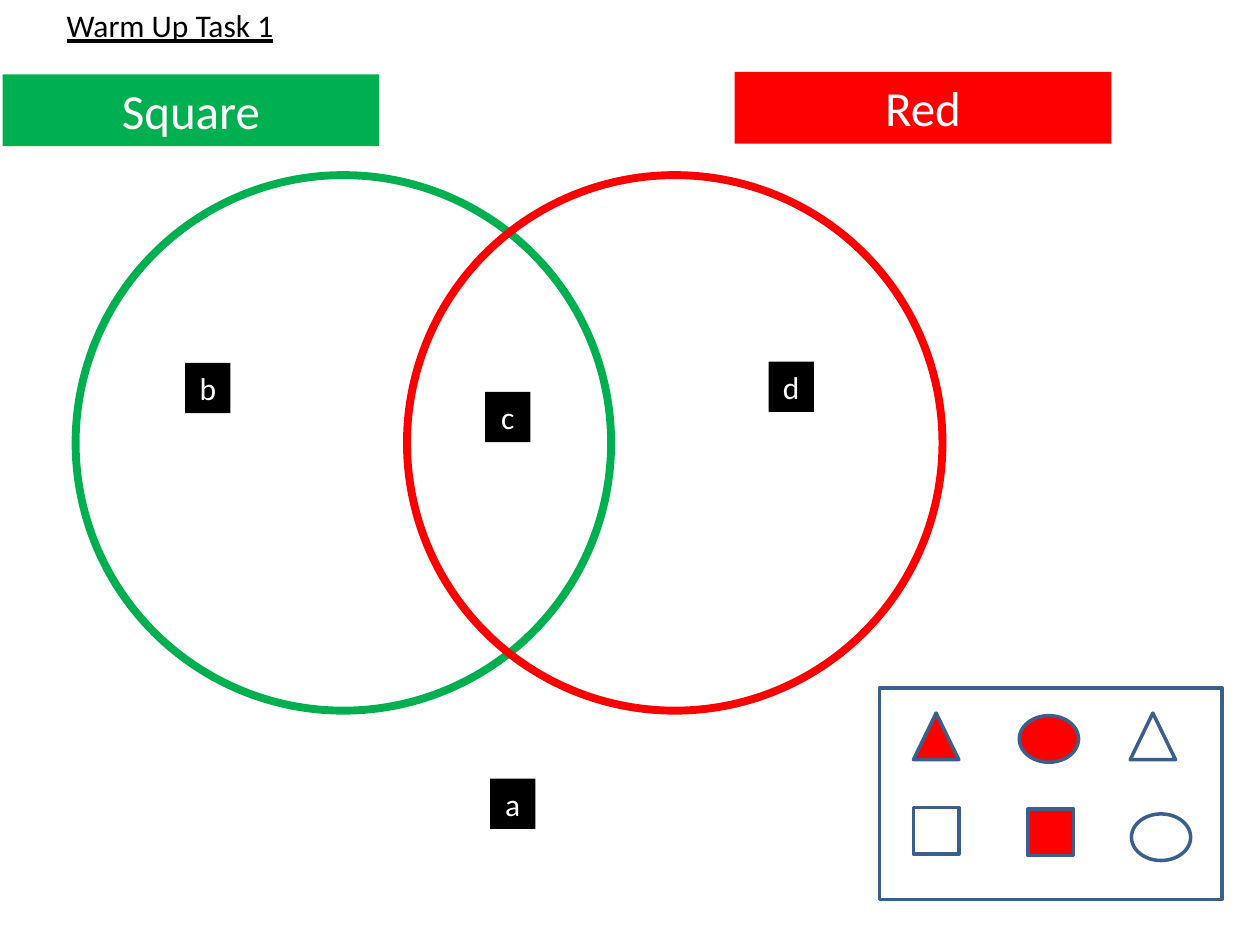
from pptx import Presentation
from pptx.dml.color import RGBColor
from pptx.enum.shapes import MSO_SHAPE as Kind
from pptx.enum.text import MSO_ANCHOR as Anchor, MSO_AUTO_SIZE as Auto, PP_ALIGN as Align
from pptx.util import Inches, Pt

RED, GREEN, WHITE, BLACK, EDGE = "FF0000", "00B050", "FFFFFF", "000000", "3A5F8C"


def color(code):
    return RGBColor.from_string(code)


def draw(shapes, kind, box, fill=None, line=None, width=2):
    shape = shapes.add_shape(kind, *map(Inches, box))
    shape.shadow.inherit = False
    if fill:
        shape.fill.solid()
        shape.fill.fore_color.rgb = color(fill)
    else:
        shape.fill.background()
    if line:
        shape.line.color.rgb = color(line)
        shape.line.width = Pt(width)
    else:
        shape.line.fill.background()
    return shape


def write(shape, text, size=18, ink=WHITE, align=Align.CENTER, under=None):
    frame = shape.text_frame
    frame.word_wrap = True
    frame.auto_size = Auto.SHAPE_TO_FIT_TEXT
    frame.vertical_anchor = Anchor.TOP
    para = frame.paragraphs[0]
    para.alignment = align
    run = para.add_run()
    run.text = text
    font = run.font
    font.name, font.size, font.underline = "Calibri", Pt(size), under
    font.color.rgb = color(ink)


def add_title(shapes, box):
    write(shapes.add_textbox(*map(Inches, box)), "Warm Up Task 1",
          ink=BLACK, align=Align.LEFT, under=True)


def add_head(shapes, box, text, fill):
    write(draw(shapes, Kind.RECTANGLE, box, fill), text, size=28)


def add_venn(shapes, box):
    left, top, wide, high = box
    # Two overlapping rings, as tall as the box
    for x, hue in ((left, GREEN), (left + wide - high, RED)):
        draw(shapes, Kind.OVAL, (x, top, high, high), line=hue, width=4.5)
    # Region labels, offset from the box corner
    for text, x, y in (("b", 0.87, 1.49), ("d", 5.5, 1.48),
                       ("a", 3.29, 4.79), ("c", 3.25, 1.72)):
        tag = draw(shapes, Kind.RECTANGLE, (left + x, top + y, 0.36, 0.4), BLACK)
        write(tag, text)


def add_key(shapes, box):
    left, top = box[:2]
    group = shapes.add_group_shape().shapes
    draw(group, Kind.RECTANGLE, box, WHITE, EDGE)
    # Shapes to sort, offset from the box corner
    for kind, x, y, fill in (
        (Kind.ISOSCELES_TRIANGLE, 0.27, 0.2, RED),
        (Kind.OVAL, 1.11, 0.22, RED),
        (Kind.ISOSCELES_TRIANGLE, 1.99, 0.2, WHITE),
        (Kind.RECTANGLE, 0.27, 0.95, WHITE),
        (Kind.RECTANGLE, 1.18, 0.96, RED),
        (Kind.OVAL, 2, 1, WHITE),
    ):
        wide = 0.47 if kind == Kind.OVAL else 0.36
        draw(group, kind, (left + x, top + y, wide, 0.37), fill, EDGE)


def main():
    deck = Presentation()
    deck.slide_width, deck.slide_height = Inches(10), Inches(7.5)
    shapes = deck.slides.add_slide(deck.slide_layouts[6]).shapes
    add_head(shapes, (5.83, 0.57, 2.99, 0.57), "Red", RED)
    add_head(shapes, (0.02, 0.59, 2.99, 0.57), "Square", GREEN)
    add_venn(shapes, (0.6, 1.39, 6.88, 4.25))
    add_key(shapes, (6.98, 5.46, 2.72, 1.68))
    add_title(shapes, (0.43, 0, 3.64, 0.4))
    deck.save("out.pptx")


if __name__ == "__main__":
    main()
